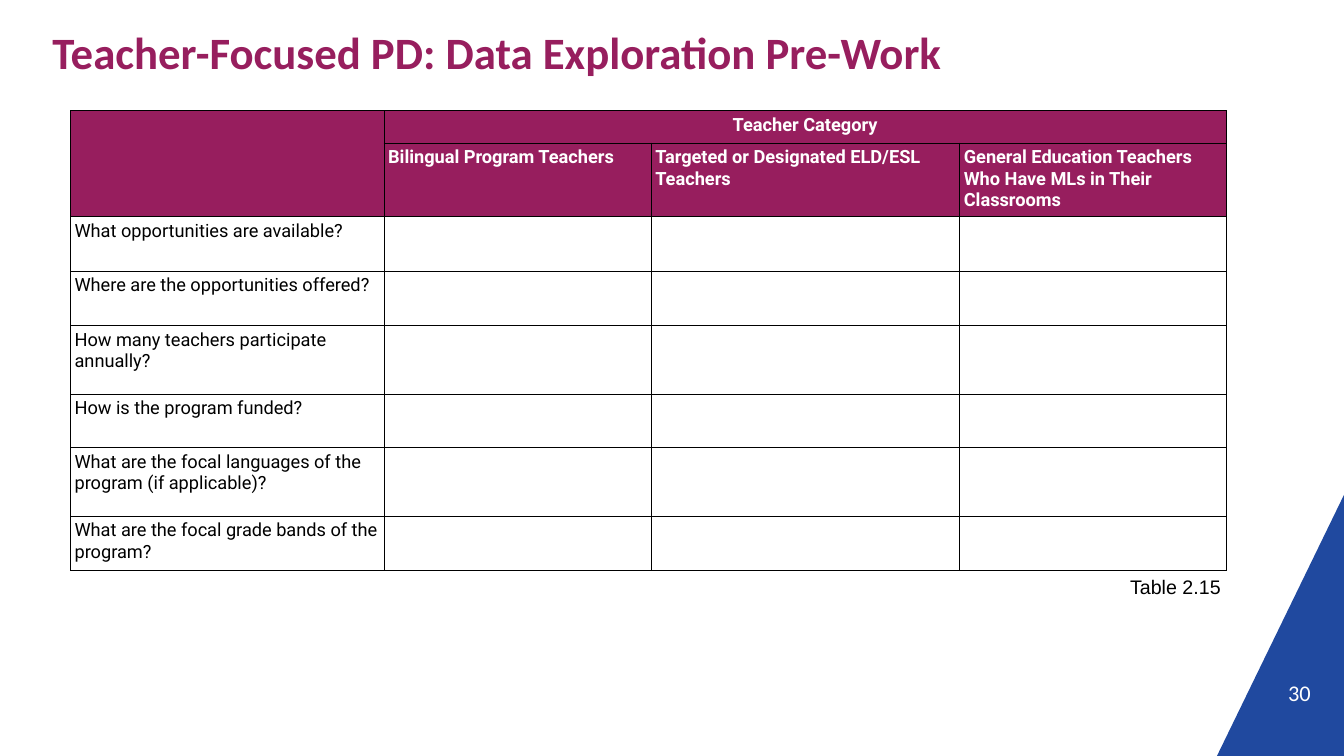
from lxml.etree import SubElement
from pptx import Presentation
from pptx.dml.color import RGBColor
from pptx.enum.text import MSO_ANCHOR as Anchor, PP_ALIGN as Align
from pptx.oxml.ns import qn
from pptx.util import Inches, Pt

PLUM, BLUE, WHITE, BLACK = "971E5E", "20499F", "FFFFFF", "000000"
COL_WIDTHS = [3.11, 2.65, 3.06, 2.64]
ROW_HEIGHTS = [0.32, 0.71, 0.54, 0.54, 0.68, 0.53, 0.68, 0.54]
CATEGORIES = [
    "Bilingual Program Teachers",
    "Targeted or Designated ELD/ESL Teachers",
    "General Education Teachers Who Have MLs in Their Classrooms",
]
QUESTIONS = [
    "What opportunities are available?",
    "Where are the opportunities offered?",
    "How many teachers participate annually?",
    "How is the program funded?",
    "What are the focal languages of the program (if applicable)?",
    "What are the focal grade bands of the program?",
]


def rgb(color):
    return RGBColor.from_string(color)


def write(tf, text, size, font, color, bold=False, align=Align.LEFT):
    """Put one styled run in the first paragraph and return the paragraph."""
    p = tf.paragraphs[0]
    p.alignment = align
    r = p.add_run()
    r.text = text
    r.font.size = Pt(size)
    r.font.name = font
    r.font.bold = bold
    r.font.color.rgb = rgb(color)
    return p


prs = Presentation()
prs.slide_width, prs.slide_height = Inches(13.33), Inches(7.5)
s = prs.slides.add_slide(prs.slide_layouts[6])

# Corner wedge
outline = s.shapes.build_freeform(Inches(13.33), Inches(4.91))
outline.add_line_segments(
    [(Inches(12.07), Inches(7.5)), (Inches(13.33), Inches(7.5))], close=True)
wedge = outline.convert_to_shape()
wedge.shadow.inherit = False
wedge.fill.solid()
wedge.fill.fore_color.rgb = rgb(BLUE)
wedge.line.fill.background()

# Title, page number and table caption
texts = [
    ((0.52, 0.24, 11.98, 0.54), 0, Anchor.MIDDLE,
     ("Teacher-Focused PD: Data Exploration Pre-Work", 32, "Calibri", PLUM, True)),
    ((12.01, 6.7, 0.99, 0.3), 0, Anchor.BOTTOM,
     ("30", 16, "Calibri", WHITE, False, Align.RIGHT)),
    ((11.11, 5.65, 1.39, 0.34), None, Anchor.TOP,
     ("Table 2.15", 14, "Arial", BLACK)),
]
for box, margin, anchor, content in texts:
    tf = s.shapes.add_textbox(*map(Inches, box)).text_frame
    tf.word_wrap = True
    tf.vertical_anchor = anchor
    if margin is not None:
        tf.margin_left = tf.margin_right = Inches(margin)
        tf.margin_top = tf.margin_bottom = Inches(margin)
    write(tf, *content)

# Table grid
table = s.shapes.add_table(
    len(ROW_HEIGHTS), len(COL_WIDTHS), Inches(0.7), Inches(1.1),
    Inches(sum(COL_WIDTHS)), Inches(sum(ROW_HEIGHTS))).table
for column, width in zip(table.columns, COL_WIDTHS):
    column.width = Inches(width)
for row, height in zip(table.rows, ROW_HEIGHTS):
    row.height = Inches(height)

for i, row in enumerate(table.rows):
    for cell in row.cells:
        cell.margin_left = cell.margin_right = Inches(0.04)
        cell.margin_top = cell.margin_bottom = Inches(0.04)
        tcPr = cell._tc.get_or_add_tcPr()
        for side in ("lnL", "lnR", "lnT", "lnB"):
            ln = SubElement(tcPr, qn(f"a:{side}"), w=str(Pt(0.75)))
            SubElement(SubElement(ln, qn("a:solidFill")), qn("a:srgbClr"), val=BLACK)
        if i < 2:
            cell.fill.solid()
            cell.fill.fore_color.rgb = rgb(PLUM)
        else:
            cell.fill.background()
table.cell(0, 0).merge(table.cell(1, 0))
table.cell(0, 1).merge(table.cell(0, 3))

# Table wording
entries = [(0, 1, "Teacher Category")]
entries += [(1, c, text) for c, text in enumerate(CATEGORIES, 1)]
entries += [(r, 0, text) for r, text in enumerate(QUESTIONS, 2)]
for row, col, text in entries:
    header = row < 2
    p = write(table.cell(row, col).text_frame, text, 13, "Roboto",
              WHITE if header else BLACK, header,
              Align.CENTER if row == 0 else Align.LEFT)
    p.space_after = Pt(10.1)

prs.save("out.pptx")
